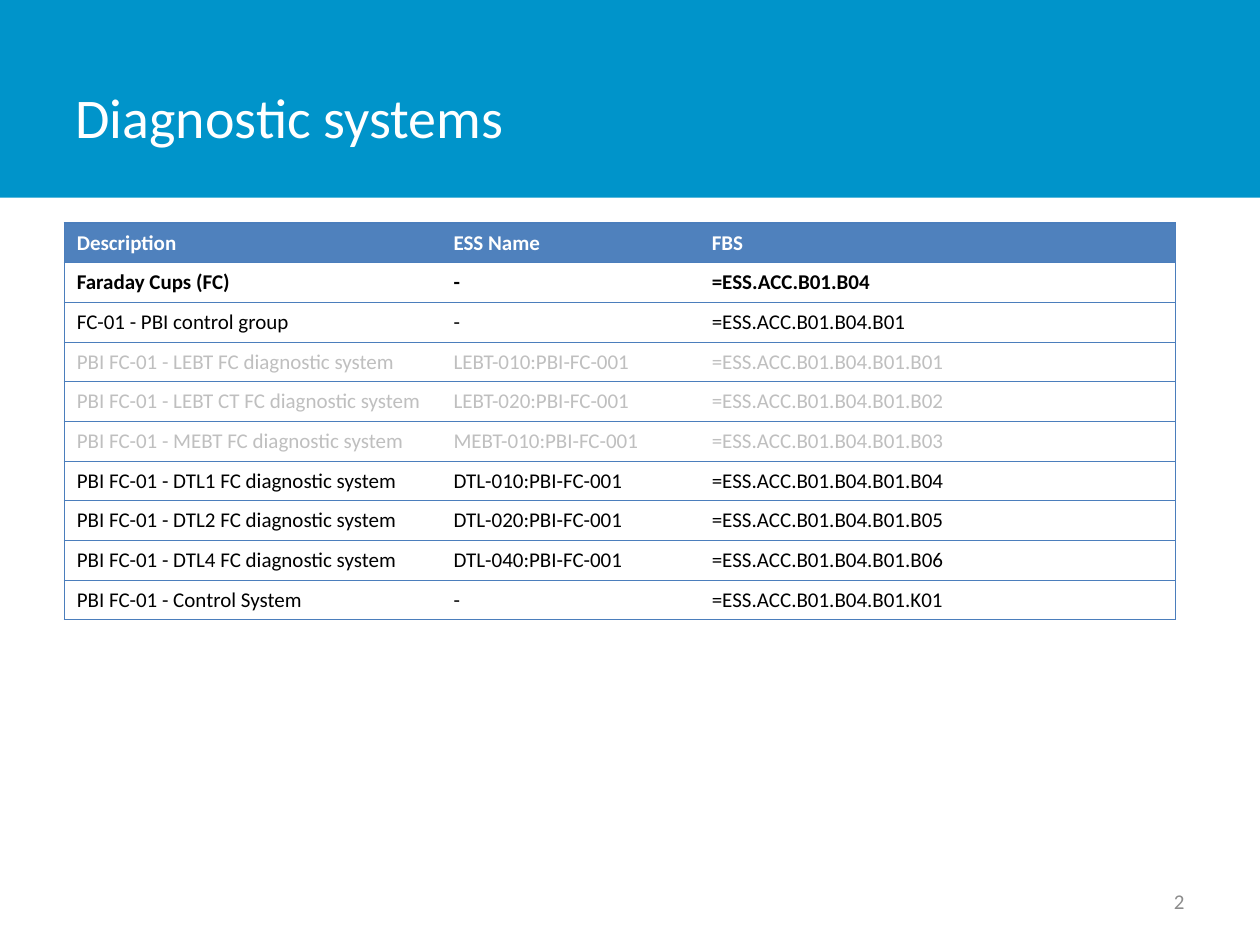
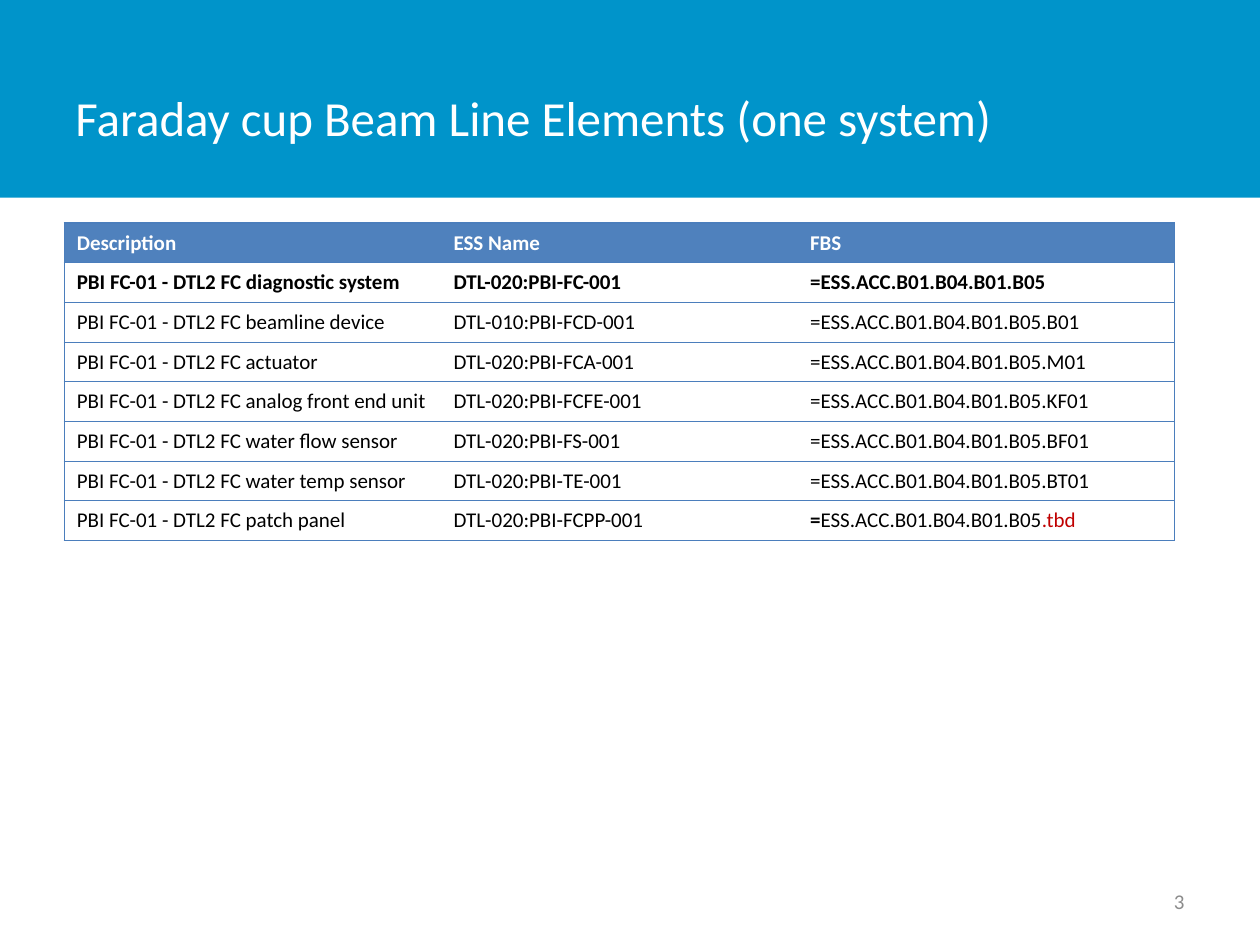
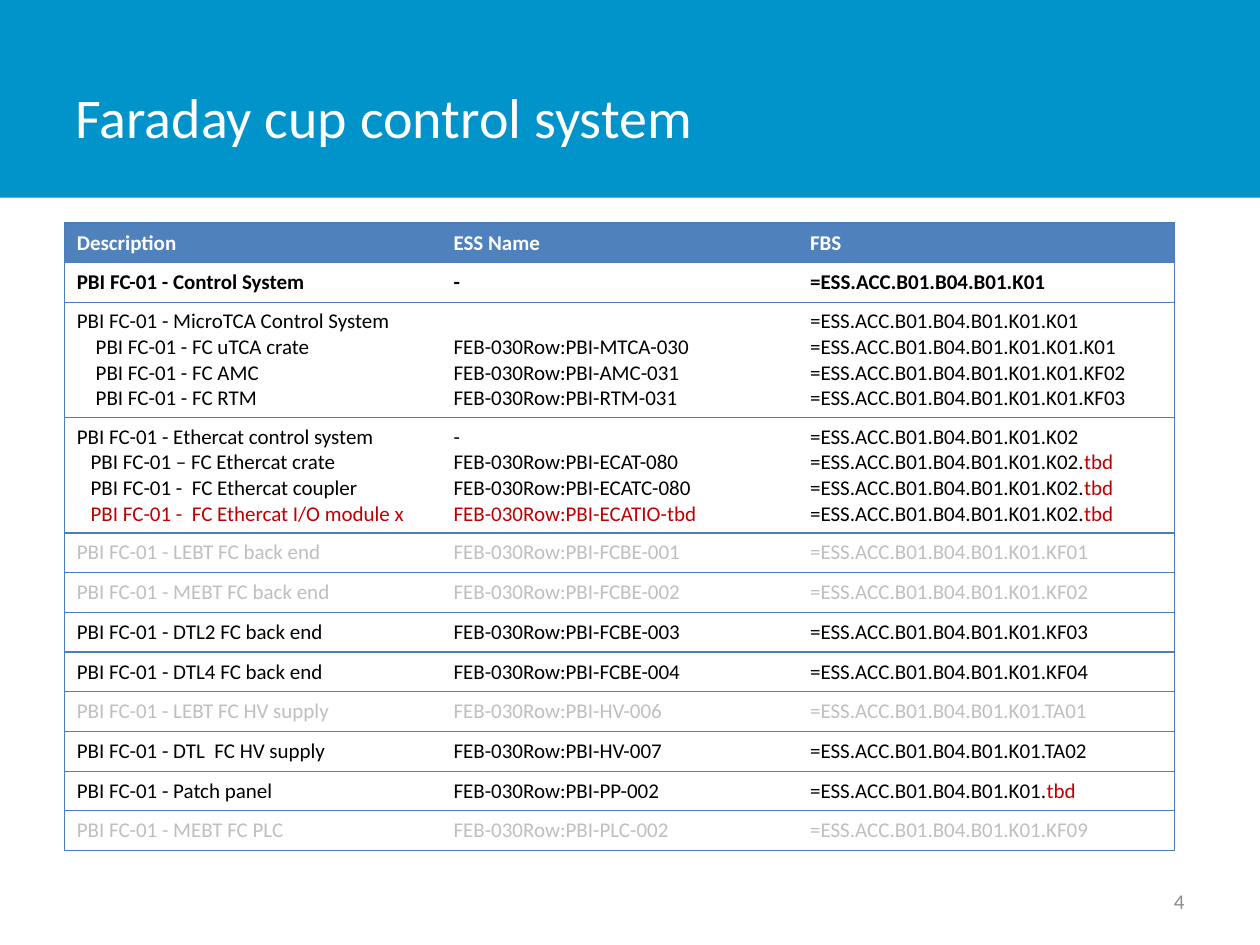
from pptx import Presentation
from pptx.dml.color import RGBColor
from pptx.enum.shapes import MSO_SHAPE
from pptx.enum.text import MSO_ANCHOR as ANCHOR, PP_ALIGN as ALIGN
from pptx.oxml import parse_xml
from pptx.oxml.ns import nsdecls
from pptx.util import Inches, Pt

COLORS = {"band": "0094CA", "header": "4F81BD", "border": "4B7EBC", "white": "FFFFFF",
          "text": "000000", "grey": "BFBFBF", "red": "C00000", "number": "8C8C8C"}
FONT = "Calibri"
NO_TABLE_STYLE = "{2D5ABB26-0587-4C30-8999-92F81FD0307C}"
ROW_HEIGHT = 3.15 / 10
LINE_HEIGHT = 0.2

# Row kinds: colour and weight of the text
ROW_KINDS = {"header": ("white", True), "bold": ("text", True),
             "plain": ("text", False), "grey": ("grey", False)}

# In cell text, "|" parts the runs, "!" starts a red run and "*" a bold one;
# a line that starts with one of these marks is indented
INDENTS = {">": 0.15, "~": 0.11}

HEADER = ("header", "Description", "ESS Name", "FBS")

# Title, title size, column widths, rows
SLIDES = [
    ("Diagnostic systems", 32, (2.99, 2.05, 3.78), [
        ("bold", "Faraday Cups (FC)", "-", "=ESS.ACC.B01.B04"),
        ("plain", "FC-01 - PBI control group", "-", "=ESS.ACC.B01.B04.B01"),
        ("grey", "PBI FC-01 - LEBT FC diagnostic system", "LEBT-010:PBI-FC-001", "=ESS.ACC.B01.B04.B01.B01"),
        ("grey", "PBI FC-01 - LEBT CT FC diagnostic system", "LEBT-020:PBI-FC-001", "=ESS.ACC.B01.B04.B01.B02"),
        ("grey", "PBI FC-01 - MEBT FC diagnostic system", "MEBT-010:PBI-FC-001", "=ESS.ACC.B01.B04.B01.B03"),
        ("plain", "PBI FC-01 - DTL1 FC diagnostic system", "DTL-010:PBI-FC-001", "=ESS.ACC.B01.B04.B01.B04"),
        ("plain", "PBI FC-01 - DTL2 FC diagnostic system", "DTL-020:PBI-FC-001", "=ESS.ACC.B01.B04.B01.B05"),
        ("plain", "PBI FC-01 - DTL4 FC diagnostic system", "DTL-040:PBI-FC-001", "=ESS.ACC.B01.B04.B01.B06"),
        ("plain", "PBI FC-01 - Control System", "-", "=ESS.ACC.B01.B04.B01.K01"),
    ]),
    ("Faraday cup Beam Line Elements (one system)", 28, (2.99, 2.83, 2.99), [
        ("bold", "PBI FC-01 - DTL2 FC diagnostic system", "DTL-020:PBI-FC-001", "=ESS.ACC.B01.B04.B01.B05"),
        ("plain", "PBI FC-01 - DTL2 FC beamline device", "DTL-010:PBI-FCD-001", "=ESS.ACC.B01.B04.B01.B05.B01"),
        ("plain", "PBI FC-01 - DTL2 FC actuator", "DTL-020:PBI-FCA-001", "=ESS.ACC.B01.B04.B01.B05.M01"),
        ("plain", "PBI FC-01 - DTL2 FC analog front end unit", "DTL-020:PBI-FCFE-001", "=ESS.ACC.B01.B04.B01.B05.KF01"),
        ("plain", "PBI FC-01 - DTL2 FC water flow sensor", "DTL-020:PBI-FS-001", "=ESS.ACC.B01.B04.B01.B05.BF01"),
        ("plain", "PBI FC-01 - DTL2 FC water temp sensor", "DTL-020:PBI-TE-001", "=ESS.ACC.B01.B04.B01.B05.BT01"),
        ("plain", "PBI FC-01 - DTL2 FC patch panel", "DTL-020:PBI-FCPP-001", "*=|ESS.ACC.B01.B04.B01.B05|!.tbd"),
    ]),
    ("Faraday cup control system", 32, (2.99, 2.83, 2.99), [
        ("bold", "PBI FC-01 - Control System", "-", "=ESS.ACC.B01.B04.B01.K01"),
        ("plain",
         "PBI FC-01 - MicroTCA Control System\n>PBI FC-01 - FC uTCA crate\n"
         ">PBI FC-01 - FC AMC\n>PBI FC-01 - FC RTM",
         "FEB-030Row:PBI-MTCA-030\nFEB-030Row:PBI-AMC-031\nFEB-030Row:PBI-RTM-031",
         "=ESS.ACC.B01.B04.B01.K01.K01\n=ESS.ACC.B01.B04.B01.K01.K01.K01\n"
         "=ESS.ACC.B01.B04.B01.K01.K01.KF02\n=ESS.ACC.B01.B04.B01.K01.K01.KF03"),
        ("plain",
         "PBI FC-01 - Ethercat control system\n~PBI FC-01 – FC Ethercat crate\n"
         "~PBI FC-01 -  FC Ethercat coupler\n~!PBI FC-01 -  FC Ethercat I/O module x",
         "-\nFEB-030Row:PBI-ECAT-080\nFEB-030Row:PBI-ECATC-080\n!FEB-030Row:PBI-ECATIO-tbd",
         "=ESS.ACC.B01.B04.B01.K01.K02" + "\n=ESS.ACC.B01.B04.B01.K01.K02.|!tbd" * 3),
        ("grey", "PBI FC-01 - LEBT FC back end", "FEB-030Row:PBI-FCBE-001", "=ESS.ACC.B01.B04.B01.K01.KF01"),
        ("grey", "PBI FC-01 - MEBT FC back end", "FEB-030Row:PBI-FCBE-002", "=ESS.ACC.B01.B04.B01.K01.KF02"),
        ("plain", "PBI FC-01 - DTL2 FC back end", "FEB-030Row:PBI-FCBE-003", "=ESS.ACC.B01.B04.B01.K01.KF03"),
        ("plain", "PBI FC-01 - DTL4 FC back end", "FEB-030Row:PBI-FCBE-004", "=ESS.ACC.B01.B04.B01.K01.KF04"),
        ("grey", "PBI FC-01 - LEBT FC HV supply", "FEB-030Row:PBI-HV-006", "=ESS.ACC.B01.B04.B01.K01.TA01"),
        ("plain", "PBI FC-01 - DTL  FC HV supply", "FEB-030Row:PBI-HV-007", "=ESS.ACC.B01.B04.B01.K01.TA02"),
        ("plain", "PBI FC-01 - Patch panel", "FEB-030Row:PBI-PP-002", "=ESS.ACC.B01.B04.B01.K01.|!tbd"),
        ("grey", "PBI FC-01 - MEBT FC PLC", "FEB-030Row:PBI-PLC-002", "=ESS.ACC.B01.B04.B01.K01.KF09"),
    ]),
]


def add_run(paragraph, text, size, color, bold=False):
    run = paragraph.add_run()
    run.text = text
    run.font.name = FONT
    run.font.size = Pt(size)
    run.font.bold = bold
    run.font.color.rgb = RGBColor.from_string(COLORS[color])


def add_text_box(slide, box, text, size, color, align):
    shape = slide.shapes.add_textbox(*map(Inches, box))
    frame = shape.text_frame
    frame.word_wrap = True
    frame.vertical_anchor = ANCHOR.MIDDLE
    frame.paragraphs[0].alignment = align
    add_run(frame.paragraphs[0], text, size, color)


presentation = Presentation()
presentation.slide_width = Inches(10)
presentation.slide_height = Inches(7.5)

for number, (title, title_size, widths, body_rows) in enumerate(SLIDES, start=2):
    slide = presentation.slides.add_slide(presentation.slide_layouts[6])

    # Title band, title and slide number
    band = slide.shapes.add_shape(MSO_SHAPE.RECTANGLE, 0, 0, Inches(10), Inches(1.57))
    band.shadow.inherit = False
    band.fill.solid()
    band.fill.fore_color.rgb = RGBColor.from_string(COLORS["band"])
    band.line.fill.background()
    add_text_box(slide, (0.5, 0.3, 7.81, 1.25), title, title_size, "white", ALIGN.LEFT)
    add_text_box(slide, (7.17, 6.95, 2.33, 0.4), str(number), 12, "number", ALIGN.RIGHT)

    # Table grid: a row grows with the lines in its tallest cell
    rows = [HEADER] + body_rows
    heights = [ROW_HEIGHT + LINE_HEIGHT * max(text.count("\n") for text in row[1:]) for row in rows]
    table_frame = slide.shapes.add_table(len(rows), len(widths), Inches(0.51), Inches(1.77),
                                         Inches(sum(widths)), Inches(sum(heights)))
    table = table_frame.table
    table.horz_banding = False
    table._tbl.tblPr.find("{*}tableStyleId").text = NO_TABLE_STYLE
    for column, width in zip(table.columns, widths):
        column.width = Inches(width)

    for row_index, (kind, *texts) in enumerate(rows):
        table.rows[row_index].height = Inches(heights[row_index])
        color, bold = ROW_KINDS[kind]
        for column_index, text in enumerate(texts):
            cell = table.cell(row_index, column_index)
            cell.vertical_anchor = ANCHOR.BOTTOM if "\n" in text else ANCHOR.MIDDLE

            # Lines around the table and between the rows
            sides = "L" * (column_index == 0) + "R" * (column_index == len(widths) - 1) + "TB"
            for side in sides:
                cell._tc.get_or_add_tcPr().append(parse_xml(
                    f'<a:ln{side} {nsdecls("a")} w="9525"><a:solidFill>'
                    f'<a:srgbClr val="{COLORS["border"]}"/></a:solidFill></a:ln{side}>'))
            if kind == "header":
                cell.fill.solid()
                cell.fill.fore_color.rgb = RGBColor.from_string(COLORS["header"])
            else:
                cell.fill.background()

            # Cell text
            for line_index, line in enumerate(text.split("\n")):
                frame = cell.text_frame
                paragraph = frame.add_paragraph() if line_index else frame.paragraphs[0]
                if line[0] in INDENTS:
                    paragraph._p.get_or_add_pPr().set("marL", str(Inches(INDENTS[line[0]])))
                    line = line[1:]
                for part in line.split("|"):
                    add_run(paragraph, part.lstrip("!*"), 12,
                            "red" if part.startswith("!") else color,
                            bold or part.startswith("*"))

presentation.save("out.pptx")
